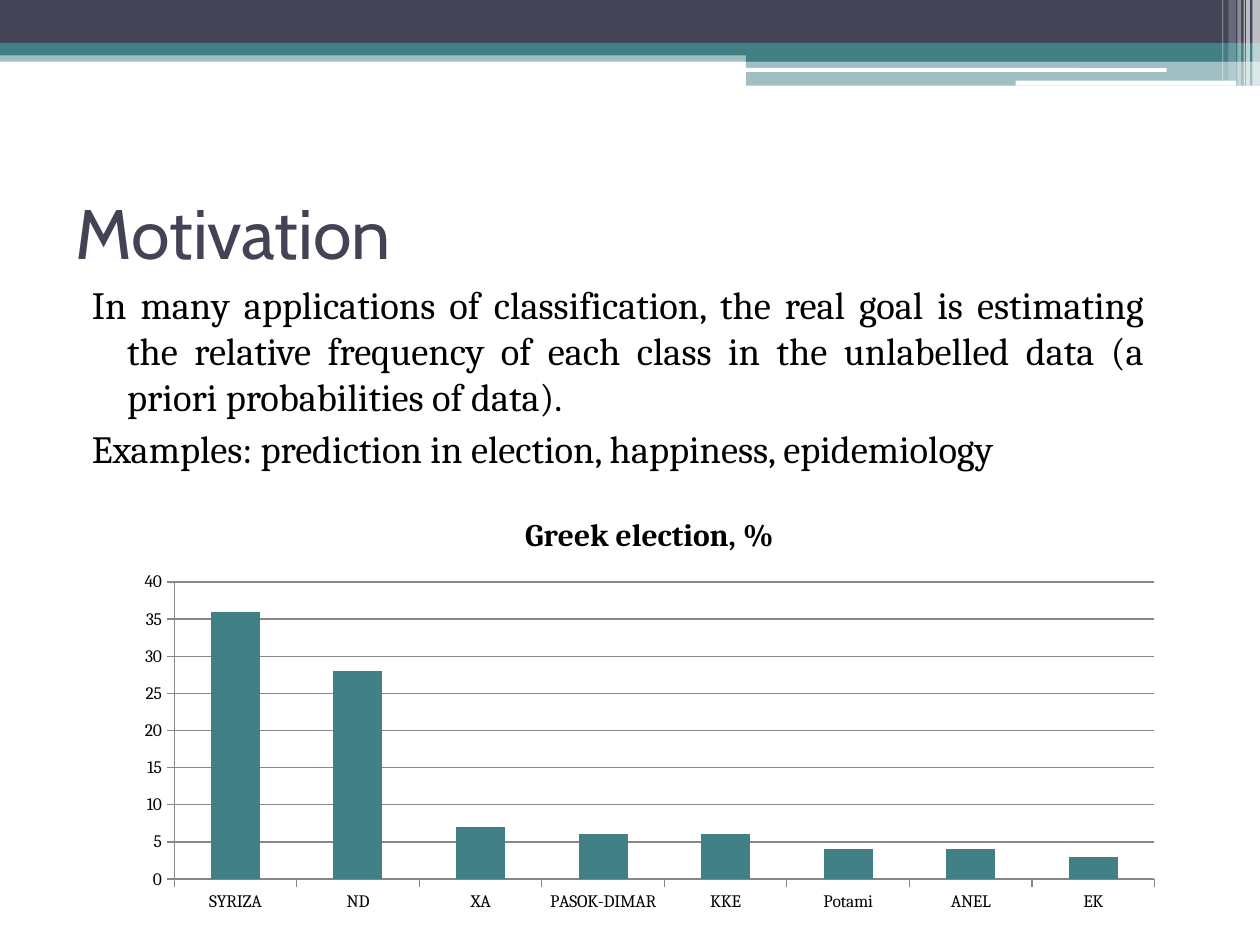
from lxml import etree
from pptx import Presentation, util as u
from pptx.chart.data import CategoryChartData
from pptx.dml.color import RGBColor
from pptx.enum import chart as ch, shapes, text
from pptx.oxml.ns import qn

COLORS = {"navy": "424456", "teal": "438086", "white": "FFFFFF", "black": "000000", "grey": "878787"}
HEADING = "Motivation"
STATEMENTS = [
    "In many applications of classification, the real goal is estimating the relative frequency "
    "of each class in the unlabelled data (a priori probabilities of data).",
    "Examples: prediction in election, happiness, epidemiology",
]
ELECTION = "Greek election, %"
RESULTS = {"SYRIZA": 36, "ND": 28, "XA": 7, "PASOK-DIMAR": 6, "KKE": 6, "Potami": 4, "ANEL": 4, "EK": 3}

WIDTH, HEIGHT = 10, 7.5
SPLIT = 5.92
RECT, ROUND = shapes.MSO_SHAPE.RECTANGLE, shapes.MSO_SHAPE.ROUNDED_RECTANGLE
BANDS = [
    (RECT, 0, 0.4, WIDTH, 0.09, "teal", 50),
    (RECT, 0, 0, WIDTH, 0.34, "navy", 100),
    (RECT, 0, 0.34, WIDTH, 0.1, "teal", 100),
    (RECT, SPLIT, 0.39, WIDTH - SPLIT, 0.1, "teal", 100),
    (RECT, SPLIT, 0.48, WIDTH - SPLIT, 0.2, "teal", 50),
    (ROUND, 5.91, 0.54, 3.35, 0.03, "white", 100),
    (ROUND, 8.06, 0.64, 1.75, 0.04, "white", 100),
]
STRIPES = [(9.94, 0.06, 0.68, 65), (9.89, 0.03, 0.68, 65), (9.87, 0.01, 0.68, 60),
           (9.82, 0.03, 0.68, 40), (9.75, 0.06, 0.64, 20), (9.7, 0.01, 0.64, 30)]
BANDS += [(RECT, left, 0, width, height, "white", alpha) for left, width, height, alpha in STRIPES]


def rgb(name):
    return RGBColor.from_string(COLORS[name])


def inches(*lengths):
    return [u.Inches(length) for length in lengths]


def apply(target, values):
    for key, value in values.items():
        setattr(target, key, value)


def style(font, face, size, color, bold=False):
    apply(font, {"name": face, "size": u.Pt(size), "bold": bold})
    font.color.rgb = rgb(color)


def place(holder, *box):
    apply(holder, dict(zip(("left", "top", "width", "height"), inches(*box))))


def add_band(slide, kind, left, top, width, height, color, alpha):
    band = slide.shapes.add_shape(kind, *inches(left, top, width, height))
    band.shadow.inherit = False
    band.line.fill.background()
    band.fill.solid()
    band.fill.fore_color.rgb = rgb(color)
    if alpha < 100:
        tint = band.element.spPr.find(f"{qn('a:solidFill')}/{qn('a:srgbClr')}")
        etree.SubElement(tint, qn("a:alpha"), val=str(alpha * 1000))


def write_heading(heading):
    place(heading, 0.5, 1.25, 9, 1.17)
    heading.text_frame.text = HEADING
    heading.text_frame.vertical_anchor = text.MSO_ANCHOR.MIDDLE
    line = heading.text_frame.paragraphs[0]
    line.alignment = text.PP_ALIGN.LEFT
    style(line.runs[0].font, "Cabin", 40, "navy")


def write_statements(body):
    place(body, 0.51, 2.18, 8.67, 1.89)
    body.text_frame.text = "\n".join(STATEMENTS)
    body.text_frame.vertical_anchor = text.MSO_ANCHOR.TOP
    for statement in body.text_frame.paragraphs:
        apply(statement, {"alignment": text.PP_ALIGN.JUSTIFY, "space_before": u.Pt(3)})
        style(statement.runs[0].font, "Cambria", 22, "black")
        properties = statement._p.get_or_add_pPr()
        properties.set("marL", str(u.Inches(0.4)))
        properties.set("indent", str(u.Inches(-0.28)))
        etree.SubElement(properties, qn("a:buNone"))


def draw_results(slide):
    data = CategoryChartData()
    data.categories = list(RESULTS)
    data.add_series(ELECTION, list(RESULTS.values()))
    results = slide.shapes.add_chart(
        ch.XL_CHART_TYPE.COLUMN_CLUSTERED, *inches(0.98, 3.91, 8.35, 3.39), data).chart
    style(results.font, "Cambria", 10, "black")
    apply(results, {"has_legend": False, "has_title": True})
    results.chart_title.include_in_layout = False
    results.chart_title.text_frame.text = ELECTION
    style(results.chart_title.text_frame.paragraphs[0].runs[0].font, "Cambria", 18, "black", True)
    plot = results.plots[0]
    apply(plot, {"gap_width": 150, "vary_by_categories": False})
    plot.series[0].format.fill.solid()
    plot.series[0].format.fill.fore_color.rgb = rgb("teal")
    apply(results.value_axis, {"minimum_scale": 0, "maximum_scale": 40, "major_unit": 5,
                               "has_major_gridlines": True})
    for axis in (results.category_axis, results.value_axis):
        axis.major_tick_mark = ch.XL_TICK_MARK.OUTSIDE
        axis.format.line.color.rgb = rgb("grey")
    results.value_axis.major_gridlines.format.line.color.rgb = rgb("grey")


def main():
    deck = Presentation()
    apply(deck, {"slide_width": u.Inches(WIDTH), "slide_height": u.Inches(HEIGHT)})
    slide = deck.slides.add_slide(deck.slide_layouts[1])
    heading, body = slide.placeholders
    for band in BANDS:
        add_band(slide, *band)
    layers = heading.element.getparent()
    layers.append(heading.element)
    write_heading(heading)
    draw_results(slide)
    layers.append(body.element)
    write_statements(body)
    deck.save("out.pptx")


if __name__ == "__main__":
    main()
